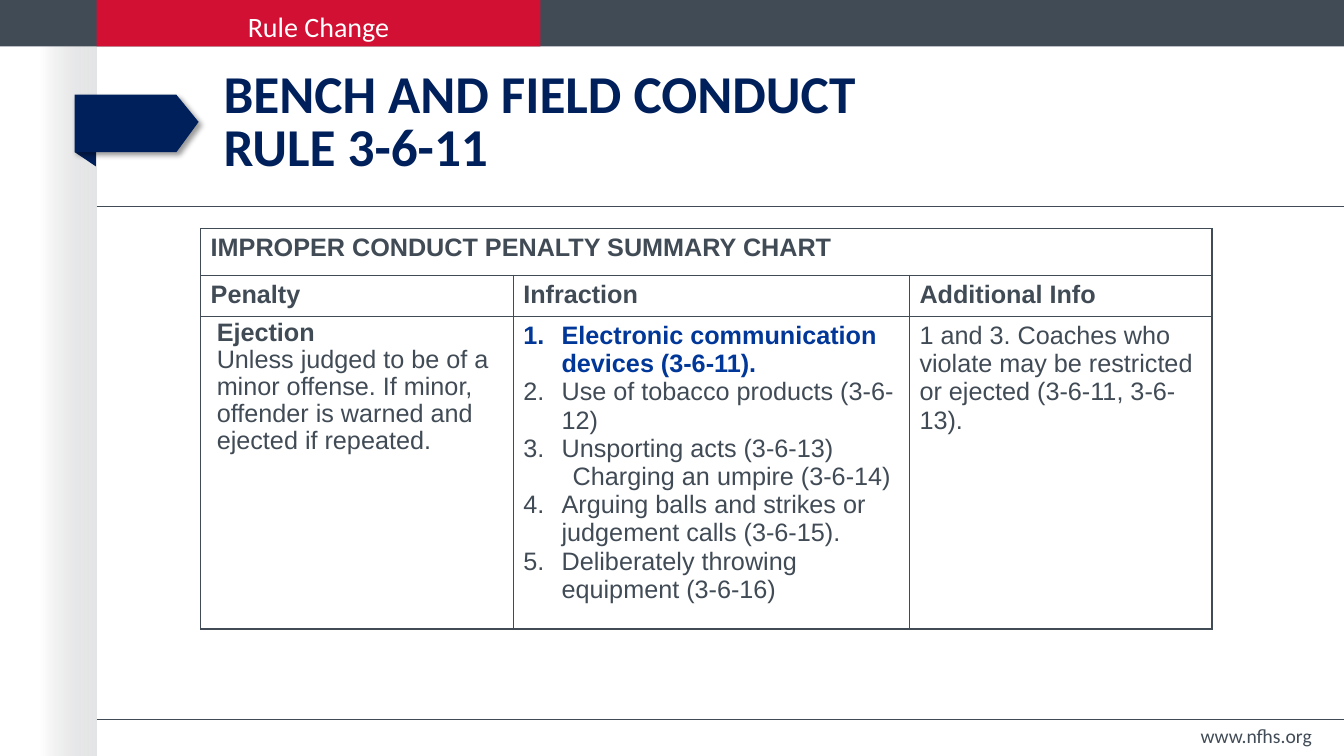
import pptx
import pptx.dml.color
import pptx.enum.shapes
import pptx.enum.text
import pptx.oxml
import pptx.oxml.ns
import pptx.util
from lxml import etree
from pptx.util import Inches

SLATE, RED, NAVY, BLUE, WHITE = "414B56", "D21034", "00205B", "003798", "FFFFFF"
ALIGN = pptx.enum.text.PP_ALIGN
ANCHOR = pptx.enum.text.MSO_ANCHOR
PAGE_WIDTH, MARGIN_EDGE, BAR_HEIGHT = 13.33, 0.96, 0.46

HEADINGS = ["Penalty", "Infraction", "Additional Info"]
PENALTY = "Unless judged to be of a minor offense. If minor, offender is warned and ejected if repeated."
INFRACTIONS = [
    ("Electronic communication devices (3-6-11).", 1),
    ("Use of tobacco products (3-6-12)", 1),
    ("Unsporting acts (3-6-13)", 1),
    ("Charging an umpire (3-6-14)", None),
    ("Arguing balls and strikes or judgement calls (3-6-15).", 4),
    ("Deliberately throwing equipment (3-6-16)", 4),
]
COACHES = "1 and 3. Coaches who violate may be restricted or ejected (3-6-11, 3-6-13)."


def color(value):
    return pptx.dml.color.RGBColor.from_string(value)


def add_xml(parent, tag, **attributes):
    return etree.SubElement(parent, pptx.oxml.ns.qn(tag), attributes)


def paint(shape, fill):
    shape.shadow.inherit = False
    shape.line.fill.background()
    shape.fill.solid()
    shape.fill.fore_color.rgb = color(fill)
    return shape


def add_bar(slide, left, top, width, height, fill):
    rectangle = pptx.enum.shapes.MSO_SHAPE.RECTANGLE
    bar = slide.shapes.add_shape(rectangle, Inches(left), Inches(top), Inches(width), Inches(height))
    return paint(bar, fill)


def add_side_shade(slide):
    shade = add_bar(slide, 0.4, 0.45, 0.56, 7.05, WHITE)
    shade.fill.gradient()
    shade.fill.gradient_angle = 0
    for stop, value in zip(shade.fill.gradient_stops, ("C8C9CC", "E4E5E6")):
        stop.color.rgb = color(value)
    clear_end = next(shade._element.spPr.iter(pptx.oxml.ns.qn("a:srgbClr")))
    add_xml(clear_end, "a:alpha", val="0")


def add_rule(slide, top):
    straight = pptx.enum.shapes.MSO_CONNECTOR.STRAIGHT
    rule = slide.shapes.add_connector(
        straight, Inches(MARGIN_EDGE), Inches(top), Inches(PAGE_WIDTH), Inches(top))
    rule.line.color.rgb = color(SLATE)
    rule.line.width = pptx.util.Pt(1)
    add_xml(rule._element.spPr, "a:effectLst")


def add_outline(slide, points, fill):
    corners = [(Inches(x), Inches(y)) for x, y in points]
    builder = slide.shapes.build_freeform(*corners[0])
    builder.add_line_segments(corners[1:], close=True)
    return paint(builder.convert_to_shape(), fill)


def add_ribbon(slide):
    add_outline(slide, [(0.74, 1.51), (0.95, 1.51), (0.95, 1.65)], NAVY)
    ribbon = add_outline(
        slide, [(0.74, 0.94), (0.74, 1.51), (1.75, 1.51), (1.97, 1.21), (1.75, 0.94)], NAVY)
    effects = ribbon._element.spPr.find(pptx.oxml.ns.qn("a:effectLst"))
    shadow = add_xml(effects, "a:outerShdw", blurRad=str(pptx.util.Pt(4)),
                     dist=str(pptx.util.Pt(3)), dir="2700000", algn="tl", rotWithShape="0")
    add_xml(add_xml(shadow, "a:srgbClr", val="000000"), "a:alpha", val="40000")


def write(paragraph, text, size, font, fill, bold=False):
    paragraph.text = text
    for run in paragraph.runs:
        run.font.size = pptx.util.Pt(size)
        run.font.name = font
        run.font.bold = bold
        run.font.color.rgb = color(fill)


def add_label(slide, left, top, width, height, text, size, fill,
              align=ALIGN.LEFT, anchor=ANCHOR.MIDDLE, bold=False):
    box = slide.shapes.add_textbox(Inches(left), Inches(top), Inches(width), Inches(height))
    frame = box.text_frame
    frame.word_wrap = True
    frame.vertical_anchor = anchor
    paragraph = frame.paragraphs[0]
    paragraph.alignment = align
    write(paragraph, text, size, "Calibri", fill, bold)
    return paragraph


def write_cell(paragraph, text, fill=SLATE, bold=False):
    write(paragraph, text, 18, "Arial", fill, bold)


def indent(paragraph, left, hanging=0):
    properties = paragraph._p.get_or_add_pPr()
    properties.set("marL", str(Inches(left)))
    properties.set("indent", str(-Inches(hanging)))
    return properties


def paragraphs_for(frame, count):
    return [frame.paragraphs[0]] + [frame.add_paragraph() for _ in range(count - 1)]


def fill_penalty(cell):
    cell.margin_top = Inches(0.03)
    ejection, details = paragraphs_for(cell.text_frame, 2)
    for paragraph, text in ((ejection, "Ejection"), (details, PENALTY)):
        indent(paragraph, 0.06)
        paragraph.line_spacing = 0.96
        write_cell(paragraph, text, bold=paragraph is ejection)


def fill_infractions(cell):
    paragraphs = paragraphs_for(cell.text_frame, len(INFRACTIONS))
    for index, (paragraph, (text, start)) in enumerate(zip(paragraphs, INFRACTIONS)):
        if start is None:
            indent(paragraph, 0.49)
        else:
            properties = indent(paragraph, 0.38, 0.38)
            numbering = {"startAt": str(start)} if start > 1 else {}
            add_xml(properties, "a:buFont", typeface="+mj-lt")
            add_xml(properties, "a:buAutoNum", type="arabicPeriod", **numbering)
        write_cell(paragraph, text, BLUE if index == 0 else SLATE, index == 0)


def frame_cell(cell):
    properties = cell._tc.get_or_add_tcPr()
    for side in ("a:lnL", "a:lnR", "a:lnT", "a:lnB"):
        border = add_xml(properties, side, w=str(pptx.util.Pt(1)))
        add_xml(add_xml(border, "a:solidFill"), "a:srgbClr", val=SLATE)
    cell.fill.background()


def add_penalty_table(slide):
    widths, heights = (3.1, 3.93, 3), (0.46, 0.41, 2.89)
    table = slide.shapes.add_table(
        3, 3, Inches(1.99), Inches(2.27), Inches(sum(widths)), Inches(sum(heights))).table
    table.first_row = False
    table.horz_banding = False
    for column, width in zip(table.columns, widths):
        column.width = Inches(width)
    for row, height in zip(table.rows, heights):
        row.height = Inches(height)
    for cell in table.iter_cells():
        frame_cell(cell)
    table.cell(0, 0).merge(table.cell(0, 2))
    write_cell(table.cell(0, 0).text_frame.paragraphs[0],
               "IMPROPER CONDUCT PENALTY SUMMARY CHART", bold=True)
    for column, heading in enumerate(HEADINGS):
        write_cell(table.cell(1, column).text_frame.paragraphs[0], heading, bold=True)
    fill_penalty(table.cell(2, 0))
    fill_infractions(table.cell(2, 1))
    write_cell(table.cell(2, 2).text_frame.paragraphs[0], COACHES)


def main():
    deck = pptx.Presentation()
    deck.slide_width, deck.slide_height = Inches(PAGE_WIDTH), Inches(7.5)
    slide = deck.slides.add_slide(deck.slide_layouts[6])
    add_side_shade(slide)
    add_bar(slide, 0, 0, PAGE_WIDTH, BAR_HEIGHT, SLATE)
    add_bar(slide, MARGIN_EDGE, 0, 4.4, BAR_HEIGHT, RED)
    for top in (2.05, 7.14):
        add_rule(slide, top)
    add_ribbon(slide)
    add_label(slide, MARGIN_EDGE, 0.05, 4.4, 0.44, "Rule Change", 20, WHITE,
              align=ALIGN.CENTER, anchor=ANCHOR.TOP)
    title = add_label(slide, 2.12, 0.57, 10.97, 1.32,
                      "BENCH AND FIELD CONDUCT\vRULE 3-6-11", 38, NAVY, bold=True)
    title.line_spacing = pptx.util.Pt(38)
    add_label(slide, 10.93, 7.14, 2.18, 0.32, "www.nfhs.org", 14, SLATE, align=ALIGN.RIGHT)
    add_penalty_table(slide)
    deck.save("out.pptx")


if __name__ == "__main__":
    main()
